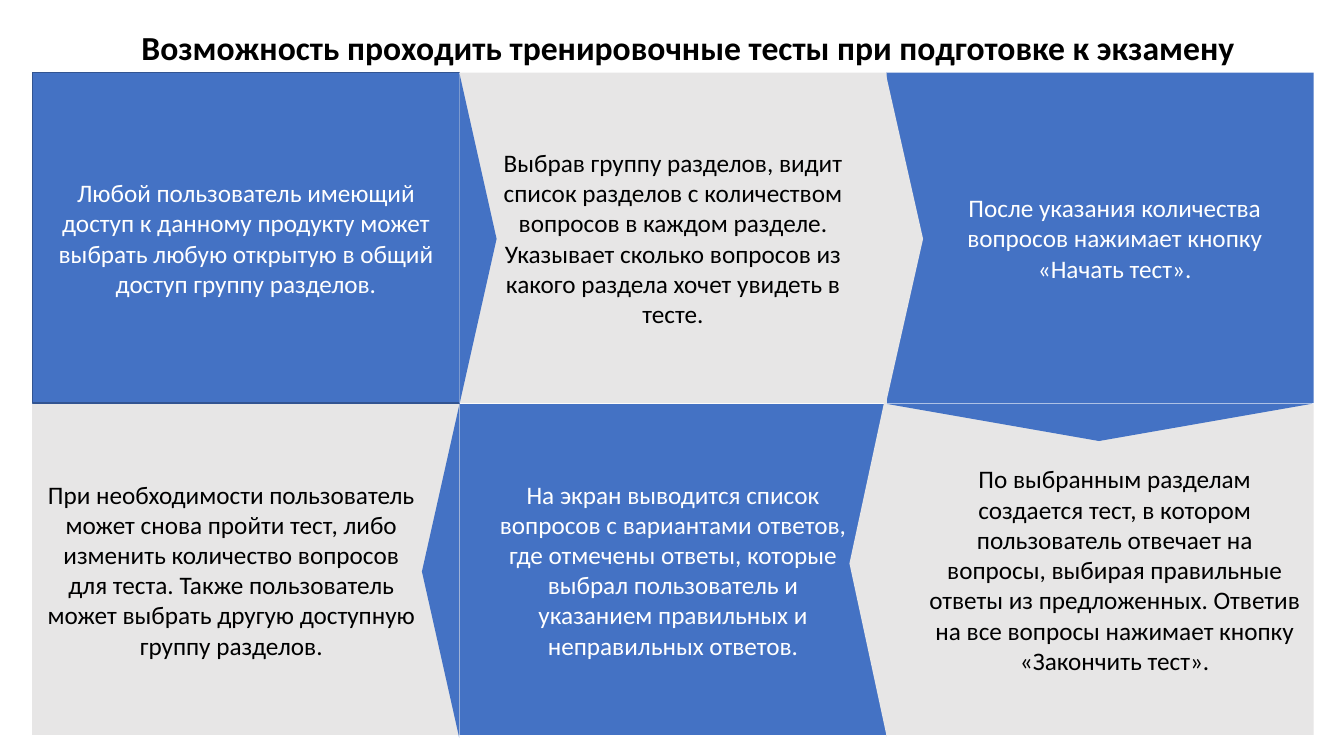
from dataclasses import dataclass

from pptx import Presentation
from pptx.dml.color import RGBColor
from pptx.enum.shapes import MSO_SHAPE as Shape
from pptx.enum.text import MSO_ANCHOR as Anchor, MSO_AUTO_SIZE as AutoSize, PP_ALIGN as Align
from pptx.util import Inches, Pt

BLUE, GREY, EDGE = "4472C4", "E7E6E6", "325491"
WHITE, BLACK = "FFFFFF", "000000"
LEFT, TOP = 0.32, 0.72
TILE_W, TILE_H = 4.24, 3.28
PITCH_X, PITCH_Y = 4.235, 3.29
NARROW, WIDE = 0.1, 0.39
ARROW_DEPTH = 0.37


@dataclass
class Tile:
    col: int
    row: int
    fill: str
    text: str
    inset_left: float = WIDE
    inset_right: float = WIDE
    line: str = ""


@dataclass
class Arrow:
    cx: float
    cy: float
    length: float
    rotation: int
    fill: str = BLUE


TILES = [
    Tile(0, 0, BLUE, "Любой пользователь имеющий доступ к данному продукту может выбрать "
         "любую открытую в общий доступ группу разделов.", NARROW, NARROW, EDGE),
    Tile(2, 0, BLUE, "После указания количества вопросов нажимает кнопку «Начать тест».",
         inset_right=NARROW),
    Tile(1, 1, BLUE, "На экран выводится список вопросов с вариантами ответов, где отмечены "
         "ответы, которые выбрал пользователь и указанием правильных и неправильных ответов."),
    Tile(1, 0, GREY, "Выбрав группу разделов, видит список разделов с количеством вопросов "
         "в каждом разделе. Указывает сколько вопросов из какого раздела хочет увидеть в тесте."),
    Tile(2, 1, GREY, "По выбранным разделам создается тест, в котором пользователь отвечает "
         "на вопросы, выбирая правильные ответы из предложенных. Ответив на все вопросы "
         "нажимает кнопку «Закончить тест».", inset_right=NARROW),
    Tile(0, 1, GREY, "При необходимости пользователь может снова пройти тест, либо изменить "
         "количество вопросов для теста. Также пользователь может выбрать другую доступную "
         "группу разделов.", inset_left=NARROW),
]

ARROWS = [
    Arrow(4.74, 2.37, 3.3, 90),
    Arrow(4.37, 5.67, 3.3, 270),
    Arrow(10.9, 4.19, 4.23, 180),
    Arrow(8.97, 2.37, 3.28, 90, GREY),
    Arrow(8.61, 5.59, 3.44, 270, GREY),
]


def rgb(value: str) -> RGBColor:
    return RGBColor.from_string(value)


def paint(sp, fill: str, line: str = "") -> None:
    sp.shadow.inherit = False
    sp.fill.solid()
    sp.fill.fore_color.rgb = rgb(fill)
    if line:
        sp.line.color.rgb = rgb(line)
        sp.line.width = Pt(1)
    else:
        sp.line.fill.background()


def write(tf, text: str, color: str, size: int, bold: bool = False, **frame) -> None:
    for name, value in frame.items():
        setattr(tf, name, value)
    p = tf.paragraphs[0]
    p.alignment = Align.CENTER
    r = p.add_run()
    r.text = text
    font = {"name": "Calibri", "size": Pt(size), "bold": bold}
    for name, value in font.items():
        setattr(r.font, name, value)
    r.font.color.rgb = rgb(color)


def add_tile(s, tile: Tile) -> None:
    sp = s.shapes.add_shape(
        Shape.RECTANGLE, Inches(LEFT + tile.col * PITCH_X), Inches(TOP + tile.row * PITCH_Y),
        Inches(TILE_W), Inches(TILE_H))
    paint(sp, tile.fill, tile.line)
    write(sp.text_frame, tile.text, WHITE if tile.fill == BLUE else BLACK, 18,
          word_wrap=True, vertical_anchor=Anchor.MIDDLE,
          margin_left=Inches(tile.inset_left), margin_right=Inches(tile.inset_right))


def add_arrow(s, arrow: Arrow) -> None:
    sp = s.shapes.add_shape(
        Shape.ISOSCELES_TRIANGLE, Inches(arrow.cx - arrow.length / 2),
        Inches(arrow.cy - ARROW_DEPTH / 2), Inches(arrow.length), Inches(ARROW_DEPTH))
    sp.rotation = arrow.rotation
    paint(sp, arrow.fill)


def main() -> None:
    prs = Presentation()
    prs.slide_width, prs.slide_height = Inches(13.33), Inches(7.5)
    s = prs.slides.add_slide(prs.slide_layouts[5])

    # Title
    title = s.shapes.title
    box = {"left": 1.26, "top": 0.22, "width": 11.13, "height": 0.5}
    for name, value in box.items():
        setattr(title, name, Inches(value))
    write(title.text_frame, "Возможность проходить тренировочные тесты при подготовке к экзамену",
          BLACK, 24, True, word_wrap=False, auto_size=AutoSize.NONE, vertical_anchor=Anchor.TOP)

    # Steps of the test
    for tile in TILES:
        add_tile(s, tile)

    # Pointers between the steps
    for arrow in ARROWS:
        add_arrow(s, arrow)

    prs.save("out.pptx")


if __name__ == "__main__":
    main()
